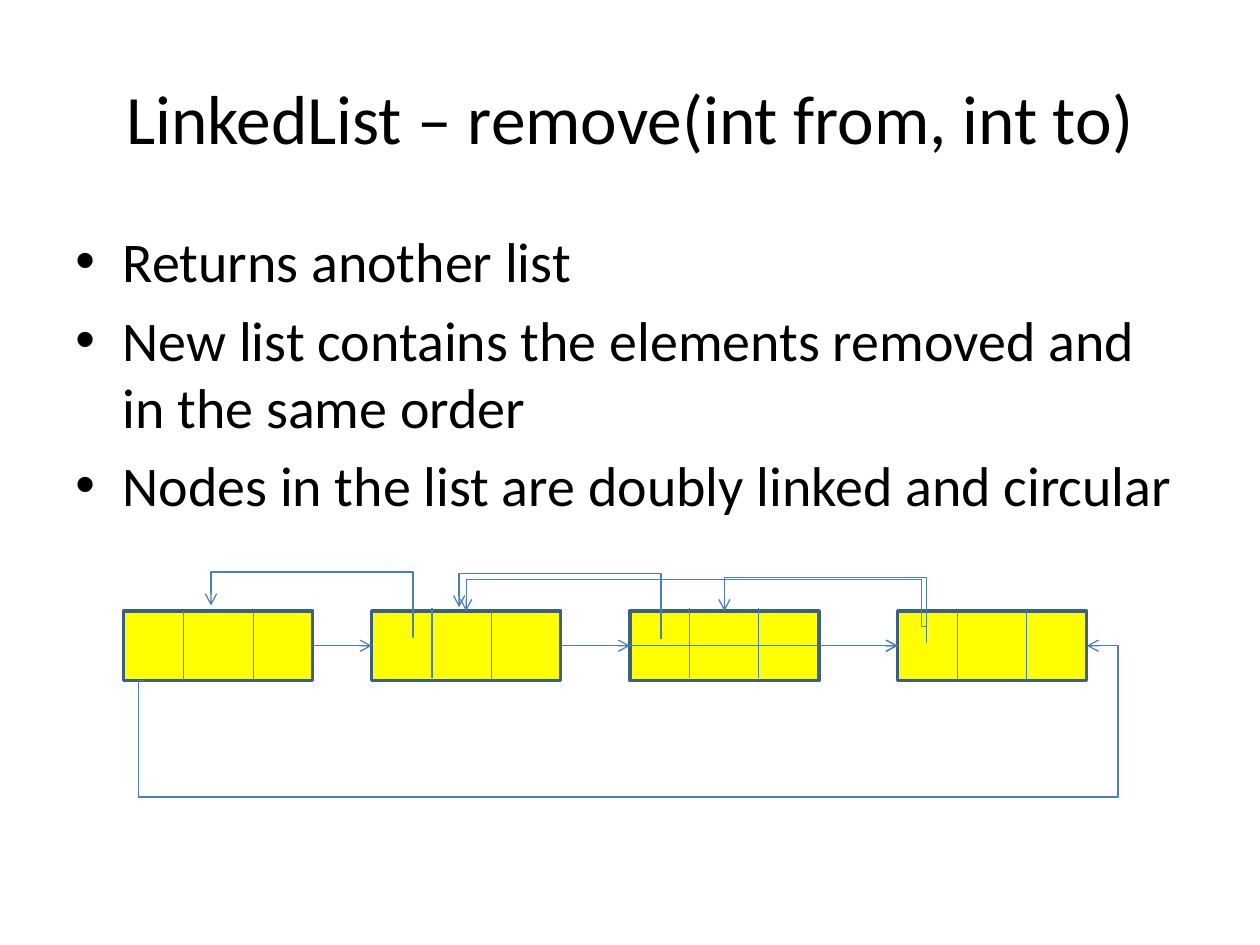
from lxml import etree
from pptx import Presentation
from pptx import util as u
from pptx.dml.color import RGBColor
from pptx.enum import shapes, text
from pptx.oxml.ns import qn

BLACK = RGBColor(0x00, 0x00, 0x00)
YELLOW = RGBColor(0xFF, 0xFF, 0x00)
NODE_EDGE = RGBColor(0x3A, 0x5F, 0x8C)
LINK_BLUE = RGBColor(0x4B, 0x7E, 0xBC)
FONT = "Calibri"


def add_span(para, words, size):
    span = para.add_run()
    span.text = words
    span.font.name = FONT
    span.font.size = u.Pt(size)
    span.font.color.rgb = BLACK


def add_link(page, kind, x1, y1, x2, y2, arrow=True):
    link = page.shapes.add_connector(kind, u.Pt(x1), u.Pt(y1), u.Pt(x2), u.Pt(y2))
    link.line.color.rgb = LINK_BLUE
    link.line.width = u.Pt(0.75)
    if arrow:
        etree.SubElement(link.line._get_or_add_ln(), qn("a:tailEnd"), type="arrow")
    etree.SubElement(link._element.spPr, qn("a:effectLst"))
    return link


deck = Presentation()
deck.slide_width, deck.slide_height = u.Pt(720), u.Pt(540)
page = deck.slides.add_slide(deck.slide_layouts[5])

title = page.shapes.title
title.left, title.top, title.width, title.height = u.Pt(36), u.Pt(21.6), u.Pt(648), u.Pt(90)
title.text_frame.vertical_anchor = text.MSO_ANCHOR.MIDDLE
para = title.text_frame.paragraphs[0]
para.alignment = text.PP_ALIGN.CENTER
add_span(para, "LinkedList – remove(int from, int to)", 39.6)

body = page.shapes.add_textbox(u.Pt(36), u.Pt(126), u.Pt(648), u.Pt(356.4))
body.text_frame.word_wrap = True
bullets = [
    "Returns another list",
    "New list contains the elements removed and in the same order",
    "Nodes in the list are doubly linked and circular",
]
for index, words in enumerate(bullets):
    para = body.text_frame.add_paragraph() if index else body.text_frame.paragraphs[0]
    para.space_before = u.Pt(6.4)
    properties = para._p.get_or_add_pPr()
    properties.set("marL", str(u.Pt(27)))
    properties.set("indent", str(u.Pt(-27)))
    etree.SubElement(properties, qn("a:buFont"), typeface="Arial")
    etree.SubElement(properties, qn("a:buChar"), char="•")
    add_span(para, words, 32)

NODE_TOP, NODE_WIDTH, NODE_HEIGHT = 349.2, 108, 39.6
STRAIGHT = shapes.MSO_CONNECTOR.STRAIGHT
node_layout = [
    (70.6, [(34.4, 0), (74.2, 0)]),
    (212.4, [(34.4, -1.6), (68.4, 0)]),
    (360, [(34.2, -1.6), (73.6, -1.6)]),
    (513, [(34.2, 0), (73.8, 0)]),
]
nodes = []
for left, dividers in node_layout:
    node = page.shapes.add_shape(
        shapes.MSO_SHAPE.RECTANGLE, u.Pt(left), u.Pt(NODE_TOP), u.Pt(NODE_WIDTH), u.Pt(NODE_HEIGHT)
    )
    node.shadow.inherit = False
    node.fill.solid()
    node.fill.fore_color.rgb = YELLOW
    node.line.color.rgb = NODE_EDGE
    node.line.width = u.Pt(2)
    nodes.append(node)
    for offset, shift in dividers:
        x, y = left + offset, NODE_TOP + shift
        add_link(page, STRAIGHT, x, y, x, y + NODE_HEIGHT, arrow=False)

for start, end in [(0, 1), (1, 2), (2, 3), (1, 3)]:
    link = add_link(page, STRAIGHT, 0, 0, 0, 0)
    link.begin_connect(nodes[start], 3)
    link.end_connect(nodes[end], 1)

bent_links = [
    ("bentConnector5", 82, 388.8, 621, 369, (-0.005, -3.36, 1.033)),
    ("bentConnector4", 530, 367.2, 414, 349.2, (0.005, 2.064)),
    ("bentConnector4", 378.4, 365, 262.4, 347, (0.005, 2.064)),
    ("bentConnector4", 236.6, 364, 120.6, 346, (0.005, 2.064)),
    ("bentConnector4", 530, 358.2, 266.4, 349.2, (0.013, 3.005)),
]
for preset, x1, y1, x2, y2, bends in bent_links:
    link = add_link(page, shapes.MSO_CONNECTOR.ELBOW, x1, y1, x2, y2)
    geometry = link._element.spPr.find(qn("a:prstGeom"))
    geometry.set("prst", preset)
    guides = geometry.find(qn("a:avLst"))
    for number, bend in enumerate(bends, 1):
        etree.SubElement(guides, qn("a:gd"), name=f"adj{number}", fmla=f"val {round(bend * 100000)}")

deck.save("out.pptx")
